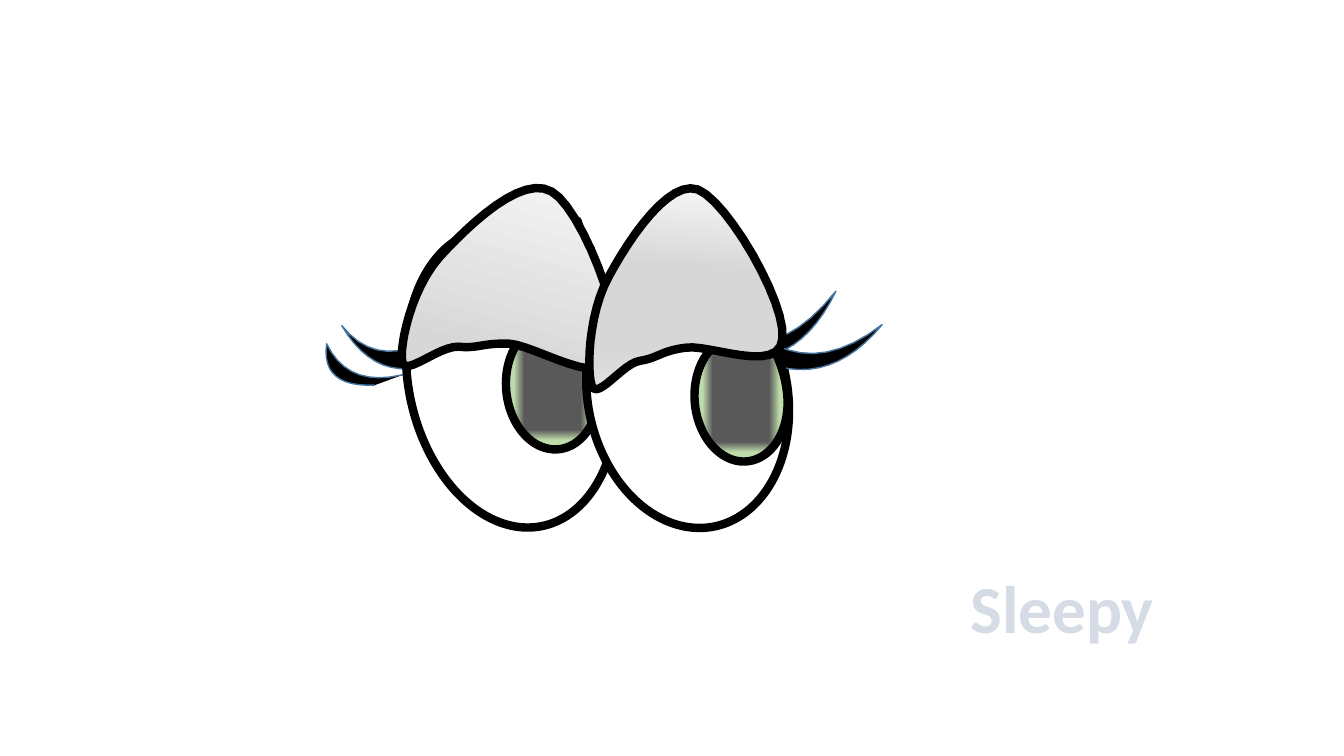
import math
from dataclasses import dataclass

import pptx
import pptx.dml.color
import pptx.enum.dml
import pptx.enum.shapes
import pptx.enum.text
import pptx.oxml
import pptx.oxml.ns
import pptx.util


@dataclass(frozen=True)
class Theme:
    font: str = "Calibri"
    mood_size: int = 48
    mood_stripe: str = "44546A"
    mood_ground: str = "D6DCE5"
    mood_edge: str = "333F50"
    ink: str = "000000"
    eye_white: str = "FFFFFF"
    lash_edge: str = "43739E"
    outline: int = 6
    hairline: int = 1
    iris: tuple = ((54, "595959"), (74, "BEDCAA"), (83, "BEDCAA"), (100, "D4E8C6"))
    left_lid: tuple = ((0, "FAFAFA"), (74, "D7D7D7"), (83, "D7D7D7"), (100, "E4E4E4"))
    right_lid: tuple = ((0, "FAFAFA"), (40, "D7D7D7"), (74, "D7D7D7"), (100, "E4E4E4"))


@dataclass(frozen=True)
class Lash:
    """Two arcs that meet at the tip, each bowed through its middle point."""
    upper_root: tuple
    upper_middle: tuple
    tip: tuple
    lower_middle: tuple
    lower_root: tuple
    rotation: float


@dataclass(frozen=True)
class Lid:
    """A closed chain of curves, each given as two handles and an end point."""
    corner: tuple
    curves: tuple
    rotation: float
    shades: tuple


THEME = Theme()
SLIDE_W, SLIDE_H = 13.33, 7.5
MOOD_BOX = (9.29, 5.57, 2.49, 1.21)
EYES_BOX = (3, 1, 6, 4.5)
EYES_GRID = 6  # columns across the eyes box; every row is as high as a column is wide
CURVE_STEPS = 12

DOWNWARD = '<a:lin ang="5400000" scaled="0"/>'
FROM_CENTRE = ('<a:path path="shape"><a:fillToRect l="50000" t="50000" '
               'r="50000" b="50000"/></a:path>')

# Every point is (column, row) in the eyes box.
LEFT_LASHES = (
    Lash((1.7, 2.06), (.95, 2.48), (.39, 2.23), (.8, 2.62), (1.32, 2.59), 310.1),
    Lash((1.37, 2.58), (.66, 2.74), (.24, 2.41), (.33, 2.73), (.72, 2.82), 342.3))
UPPER_RIGHT_LASH = Lash(
    (3.77, 2.08), (4.54, 2.4), (5.29, 1.89), (4.87, 2.42), (4.31, 2.56), 36.3)
LOWER_RIGHT_LASH = Lash(
    (4.24, 2.01), (4.94, 2.5), (5.75, 2.22), (5.22, 2.62), (4.63, 2.61), 51.5)
LEFT_LID = Lid((.99, 2.59), (
    ((.96, 2.44), (1.07, 1.88), (1.36, 1.55)),   # outer side
    ((1.66, 1.22), (2.18, .73), (2.47, .9)),     # up to the peak
    ((2.76, 1.06), (3.2, 2.18), (3.1, 2.53)),    # inner side
    ((3, 2.88), (2.3, 2.42), (2.05, 2.41)),      # drooping rim
    ((1.79, 2.4), (1.74, 2.46), (1.55, 2.44)),
    ((1.35, 2.43), (1.02, 2.74), (.99, 2.59))), 15.6, THEME.left_lid)
RIGHT_LID = Lid((2.87, 2.83), (
    ((2.82, 2.69), (2.83, 2.12), (3.04, 1.74)),  # inner side
    ((3.25, 1.35), (3.64, .78), (3.92, .88)),    # up to the peak
    ((4.21, .99), (4.8, 2), (4.76, 2.36)),       # outer side
    ((4.73, 2.72), (4.03, 2.41), (3.8, 2.45)),   # drooping rim
    ((3.56, 2.48), (3.53, 2.55), (3.35, 2.58)),
    ((3.18, 2.6), (2.93, 2.97), (2.87, 2.83))), 4.7, THEME.right_lid)


def rgb(code):
    return pptx.dml.color.RGBColor.from_string(code)


def set_all(target, values):
    for name, value in values.items():
        setattr(target, name, value)


def paint(shape, fill, edge, width, shading=DOWNWARD):
    """Fill with one colour or with (percent, colour) stops, and outline."""
    shape.shadow.inherit = False
    if isinstance(fill, str):
        shape.fill.solid()
        shape.fill.fore_color.rgb = rgb(fill)
    else:
        shape.fill.gradient()
        properties = shape._element.spPr
        plain = properties.find(pptx.oxml.ns.qn("a:gradFill"))
        stops = "".join(f'<a:gs pos="{share * 1000}"><a:srgbClr val="{code}"/></a:gs>'
                        for share, code in fill)
        properties.replace(plain, pptx.oxml.parse_xml(
            f'<a:gradFill {pptx.oxml.ns.nsdecls("a")} rotWithShape="1">'
            f'<a:gsLst>{stops}</a:gsLst>{shading}</a:gradFill>'))
    shape.line.color.rgb = rgb(edge)
    shape.line.width = pptx.util.Pt(width)


def bezier(*handles):
    """Points along the curve of any degree, without its start."""
    degree = len(handles) - 1
    points = []
    for step in range(1, CURVE_STEPS + 1):
        t = step / CURVE_STEPS
        weights = [math.comb(degree, k) * t ** k * (1 - t) ** (degree - k)
                   for k in range(degree + 1)]
        points.append(tuple(sum(w * place for w, place in zip(weights, axis))
                            for axis in zip(*handles)))
    return points


def arc(start, middle, end):
    """Points of the parabola that passes through the middle halfway."""
    handle = tuple(2 * m - (s + e) / 2 for s, m, e in zip(start, middle, end))
    return bezier(start, handle, end)


def lash_points(lash):
    return [lash.upper_root,
            *arc(lash.upper_root, lash.upper_middle, lash.tip),
            *arc(lash.tip, lash.lower_middle, lash.lower_root)]


def lid_points(lid):
    points = [lid.corner]
    for curve in lid.curves:
        points += bezier(points[-1], *curve)
    return points


def turn(point, degrees):
    x, y = point
    angle = math.radians(degrees)
    return (x * math.cos(angle) - y * math.sin(angle),
            x * math.sin(angle) + y * math.cos(angle))


def upright(points, rotation):
    """Points that land on the given ones once their shape is rotated."""
    turned = [turn(point, -rotation) for point in points]
    middle = [(min(axis) + max(axis)) / 2 for axis in zip(*turned)]
    shift = [there - here for there, here in zip(turn(middle, rotation), middle)]
    return [(x + shift[0], y + shift[1]) for x, y in turned]


def draw_eyes(slide, box):
    left, top, width, _ = box
    cell = width / EYES_GRID
    face = slide.shapes.add_group_shape().shapes

    def place(column, row):
        return pptx.util.Inches(left + column * cell), pptx.util.Inches(top + row * cell)

    def outline(points, rotation, closed):
        start, *rest = [place(*point) for point in upright(points, rotation)]
        builder = face.build_freeform(*start, scale=1.0)
        builder.add_line_segments(rest, close=closed)
        shape = builder.convert_to_shape()
        shape.rotation = rotation
        return shape

    def draw_lash(lash):
        paint(outline(lash_points(lash), lash.rotation, False),
              THEME.ink, THEME.lash_edge, THEME.hairline)

    def draw_lid(lid):
        paint(outline(lid_points(lid), lid.rotation, True),
              lid.shades, THEME.ink, THEME.outline)

    def drop(column, row, columns, rows, rotation, point, fill):
        shape = face.add_shape(
            pptx.enum.shapes.MSO_SHAPE.TEAR, *place(column, row),
            pptx.util.Inches(columns * cell), pptx.util.Inches(rows * cell))
        shape.adjustments[0] = point
        shape.rotation = rotation
        paint(shape, fill, THEME.ink, THEME.outline, FROM_CENTRE)

    def eyeball(column, row, columns, rows, point):
        drop(column, row, columns, rows, 348.4, point, THEME.eye_white)

    def pupil(column, row):
        drop(column, row, .92, 1.24, 354.5, .787, THEME.iris)

    for lash in LEFT_LASHES:
        draw_lash(lash)
    eyeball(1.05, 1.25, 2.05, 3, .93)
    pupil(2.02, 2.22)
    eyeball(2.83, 1.59, 1.98, 2.66, .923)
    draw_lash(UPPER_RIGHT_LASH)
    draw_lid(LEFT_LID)
    draw_lash(LOWER_RIGHT_LASH)
    pupil(3.89, 2.34)
    draw_lid(RIGHT_LID)


def write_mood(slide, box, wording):
    mood = slide.shapes.title
    set_all(mood, dict(zip(("left", "top", "width", "height"),
                           map(pptx.util.Inches, box))))
    set_all(mood.text_frame, {
        "text": wording, "word_wrap": True,
        "vertical_anchor": pptx.enum.text.MSO_ANCHOR.TOP,
        "auto_size": pptx.enum.text.MSO_AUTO_SIZE.SHAPE_TO_FIT_TEXT})
    line = mood.text_frame.paragraphs[0]
    line.alignment = pptx.enum.text.PP_ALIGN.CENTER
    font = line.runs[0].font
    set_all(font, {"name": THEME.font, "size": pptx.util.Pt(THEME.mood_size), "bold": True})
    font.fill.patterned()
    font.fill.pattern = pptx.enum.dml.MSO_PATTERN.DARK_UPWARD_DIAGONAL
    font.fill.fore_color.rgb = rgb(THEME.mood_stripe)
    font.fill.back_color.rgb = rgb(THEME.mood_ground)
    line.runs[0]._r.get_or_add_rPr().insert(0, pptx.oxml.parse_xml(
        f'<a:ln {pptx.oxml.ns.nsdecls("a")} w="{pptx.util.Pt(THEME.hairline)}"><a:solidFill>'
        f'<a:srgbClr val="{THEME.mood_edge}"/></a:solidFill></a:ln>'))


def main():
    deck = pptx.Presentation()
    set_all(deck, {"slide_width": pptx.util.Inches(SLIDE_W),
                   "slide_height": pptx.util.Inches(SLIDE_H)})
    slide = deck.slides.add_slide(deck.slide_layouts.get_by_name("Title Only"))
    write_mood(slide, MOOD_BOX, "Sleepy")
    draw_eyes(slide, EYES_BOX)
    deck.save("out.pptx")


if __name__ == "__main__":
    main()
